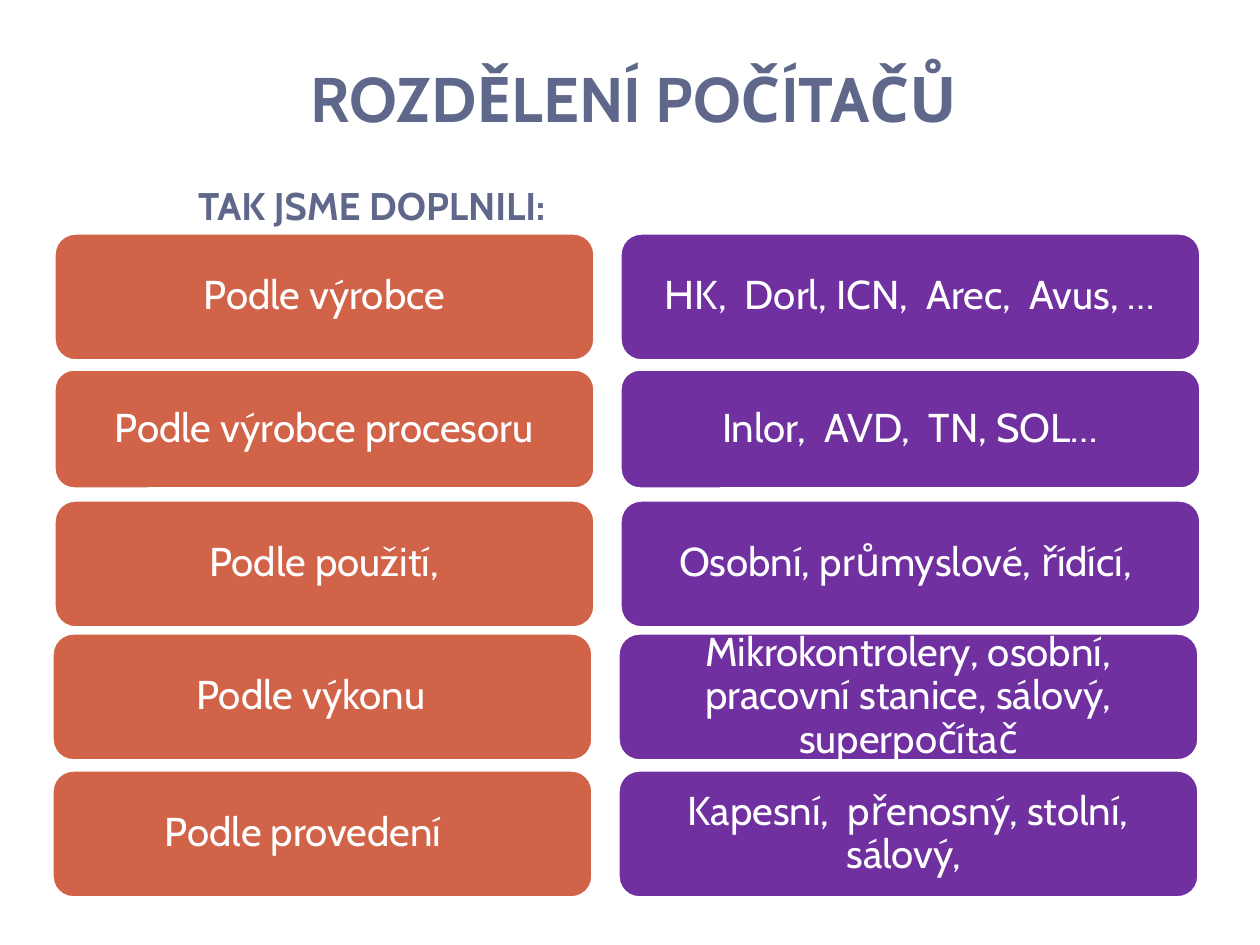
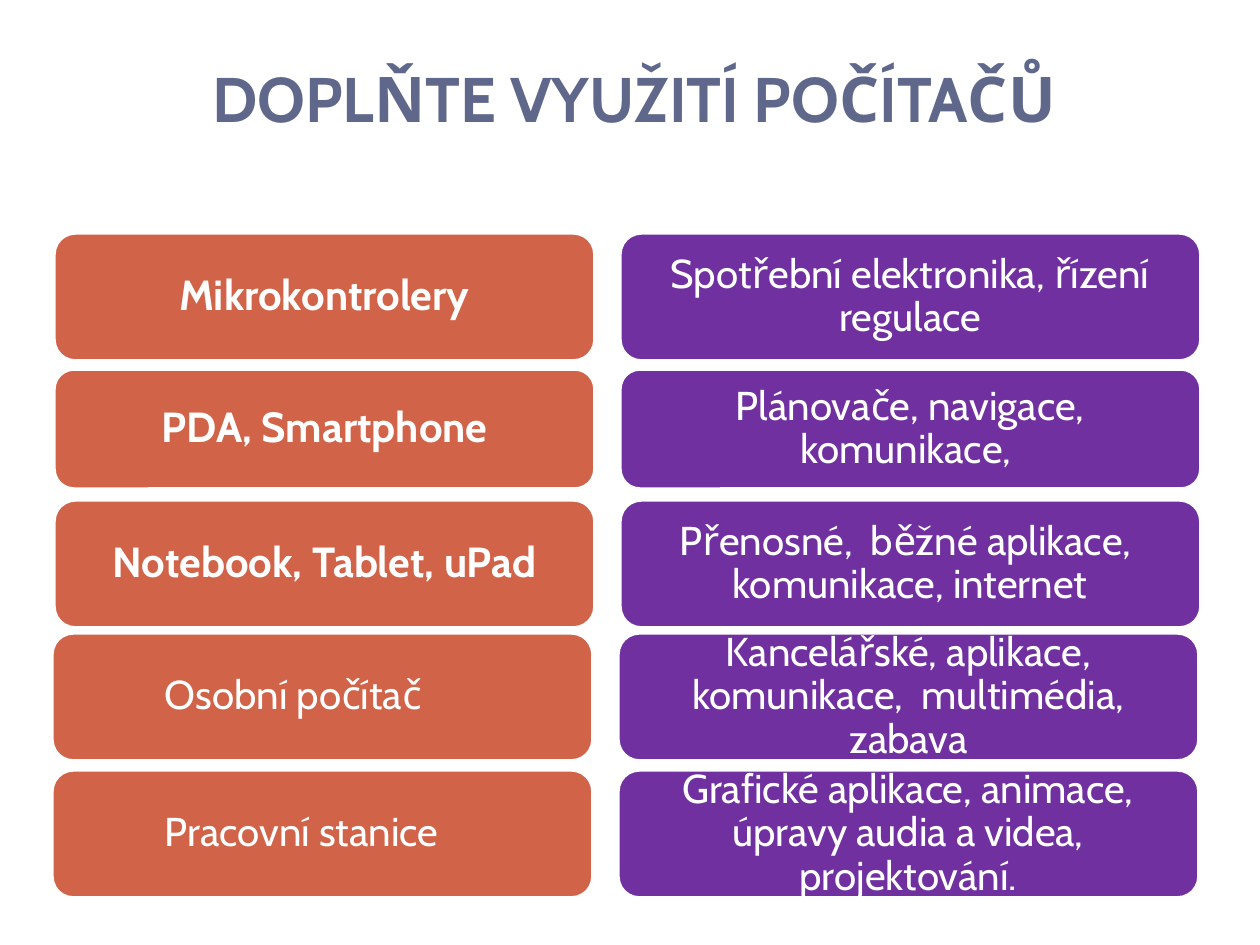
"""Build two slides that pair computer categories with examples and uses."""
from dataclasses import dataclass, field
from typing import Any, NamedTuple

from pptx import Presentation
from pptx.dml.color import RGBColor as Color
from pptx.enum.shapes import MSO_SHAPE as Shape
from pptx.enum.text import MSO_ANCHOR as Anchor, PP_ALIGN as Align
from pptx.util import Emu, Pt

PIXELS_PER_INCH = 126


@dataclass(frozen=True)
class Theme:
    """Colours, font and type sizes of the deck."""
    font: str = "Cabin"
    heading: Color = field(default_factory=lambda: Color(0x5F, 0x68, 0x8B))
    category: Color = field(default_factory=lambda: Color(0xD1, 0x63, 0x49))
    example: Color = field(default_factory=lambda: Color(0x70, 0x30, 0xA0))
    white: Color = field(default_factory=lambda: Color(0xFF, 0xFF, 0xFF))
    title_size: int = 36
    subtitle_size: int = 22
    body_size: int = 23
    strong_size: int = 24


class Area(NamedTuple):
    """A rectangle in px."""
    left: int
    top: int
    width: int
    height: int


class Column(NamedTuple):
    """Left edge, width and fill of a column of cards."""
    left: int
    width: int
    fill: Color


class Row(NamedTuple):
    """Top, height and sideways shift of a row of cards."""
    top: int
    height: int
    shift: int


class Pair(NamedTuple):
    """The two texts of a row."""
    category: str
    example: str
    strong: bool = False


class Page(NamedTuple):
    """The content of a slide."""
    title: str
    pairs: list[Pair]
    subtitle: str = ""


THEME = Theme()
TITLE_AREA = Area(54, 55, 1160, 86)
SUBTITLE_AREA = Area(174, 176, 546, 59)
COLUMNS = [Column(54, 541, THEME.category), Column(620, 581, THEME.example)]
ROWS = [Row(233, 128, 0), Row(369, 120, 0), Row(500, 128, 0), Row(633, 128, -2), Row(770, 128, -2)]

PAGES = [
    Page("ROZDĚLENÍ POČÍTAČŮ", [
        Pair("Podle výrobce", "HK,  Dorl, ICN,  Arec,  Avus, …"),
        Pair("Podle výrobce procesoru", "Inlor,  AVD,  TN, SOL…"),
        Pair("Podle použití,", "Osobní, průmyslové, řídící, "),
        Pair("Podle výkonu\t", "Mikrokontrolery, osobní, pracovní stanice, sálový, superpočítač"),
        Pair("Podle provedení\t", "Kapesní,  přenosný, stolní, sálový, "),
    ], "TAK JSME DOPLNILI:"),
    Page("DOPLŇTE VYUŽITÍ POČÍTAČŮ", [
        Pair("Mikrokontrolery", "Spotřební elektronika, řízení regulace", True),
        Pair("PDA, Smartphone", "Plánovače, navigace, komunikace, ", True),
        Pair("Notebook, Tablet, uPad", "Přenosné,  běžné aplikace,  komunikace, internet", True),
        Pair("Osobní počítač \t", "Kancelářské, aplikace, komunikace,  multimédia, zabava"),
        Pair("Pracovní stanice\t", "Grafické aplikace, animace, úpravy audia a videa, projektování."),
    ]),
]


def px(length: int) -> Emu:
    """Turn px into EMU."""
    return Emu(round(length * 914400 / PIXELS_PER_INCH))


def apply(target: Any, values: dict[str, Any]) -> None:
    """Set each named attribute of the target."""
    for name, value in values.items():
        setattr(target, name, value)


def write(box: Any, text: str, size: int, color: Color, bold: bool,
          frame_format: dict[str, Any], para_format: dict[str, Any]) -> None:
    """Write one formatted paragraph into a shape."""
    frame = box.text_frame
    apply(frame, {"word_wrap": True} | frame_format)
    para = frame.paragraphs[0]
    apply(para, para_format)
    span = para.add_run()
    span.text = text
    apply(span.font, {"name": THEME.font, "size": Pt(size), "bold": bold})
    span.font.color.rgb = color


def add_heading(slide: Any, area: Area, text: str, size: int,
                frame_format: dict[str, Any], para_format: dict[str, Any]) -> None:
    """Add a bold heading in a text box."""
    box = slide.shapes.add_textbox(*map(px, area))
    write(box, text, size, THEME.heading, True, frame_format, para_format)


def add_card(slide: Any, column: Column, row: Row, text: str, strong: bool) -> None:
    """Add a rounded card with centred text."""
    area = Area(column.left + row.shift, row.top, column.width, row.height)
    card = slide.shapes.add_shape(Shape.ROUNDED_RECTANGLE, *map(px, area))
    card.shadow.inherit = False
    card.fill.solid()
    card.fill.fore_color.rgb = column.fill
    card.line.color.rgb = THEME.white
    card.line.width = Pt(2)
    size = THEME.strong_size if strong else THEME.body_size
    margins = {"margin_left": px(12), "margin_right": px(12),
               "margin_top": px(6), "margin_bottom": px(6)}
    write(card, text, size, THEME.white, strong,
          {"vertical_anchor": Anchor.MIDDLE} | margins,
          {"alignment": Align.CENTER, "line_spacing": 0.9})


def add_page(deck: Any, page: Page) -> None:
    """Add a slide with its headings and grid of cards."""
    slide = deck.slides.add_slide(deck.slide_layouts[6])
    add_heading(slide, TITLE_AREA, page.title, THEME.title_size,
                {"vertical_anchor": Anchor.BOTTOM},
                {"alignment": Align.CENTER, "line_spacing": Pt(20)})
    if page.subtitle:
        add_heading(slide, SUBTITLE_AREA, page.subtitle, THEME.subtitle_size,
                    {"margin_left": px(24)}, {"space_before": Pt(6)})
    category_column, example_column = COLUMNS
    for row, pair in zip(ROWS, page.pairs):
        add_card(slide, category_column, row, pair.category, pair.strong)
        add_card(slide, example_column, row, pair.example, False)


def main() -> None:
    """Build and save the deck."""
    deck = Presentation()
    apply(deck, {"slide_width": px(1260), "slide_height": px(945)})
    for page in PAGES:
        add_page(deck, page)
    deck.save("out.pptx")


if __name__ == "__main__":
    main()
